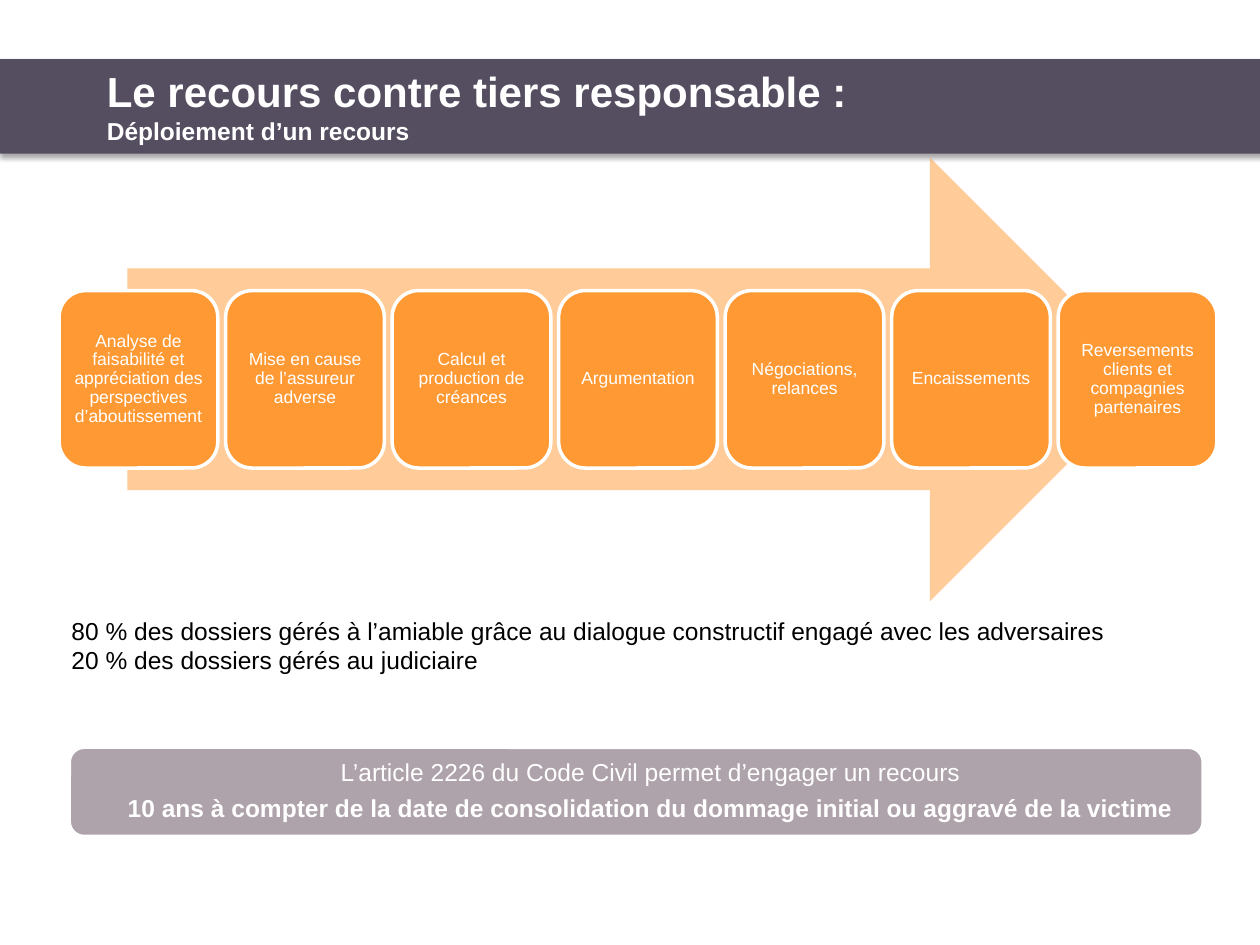
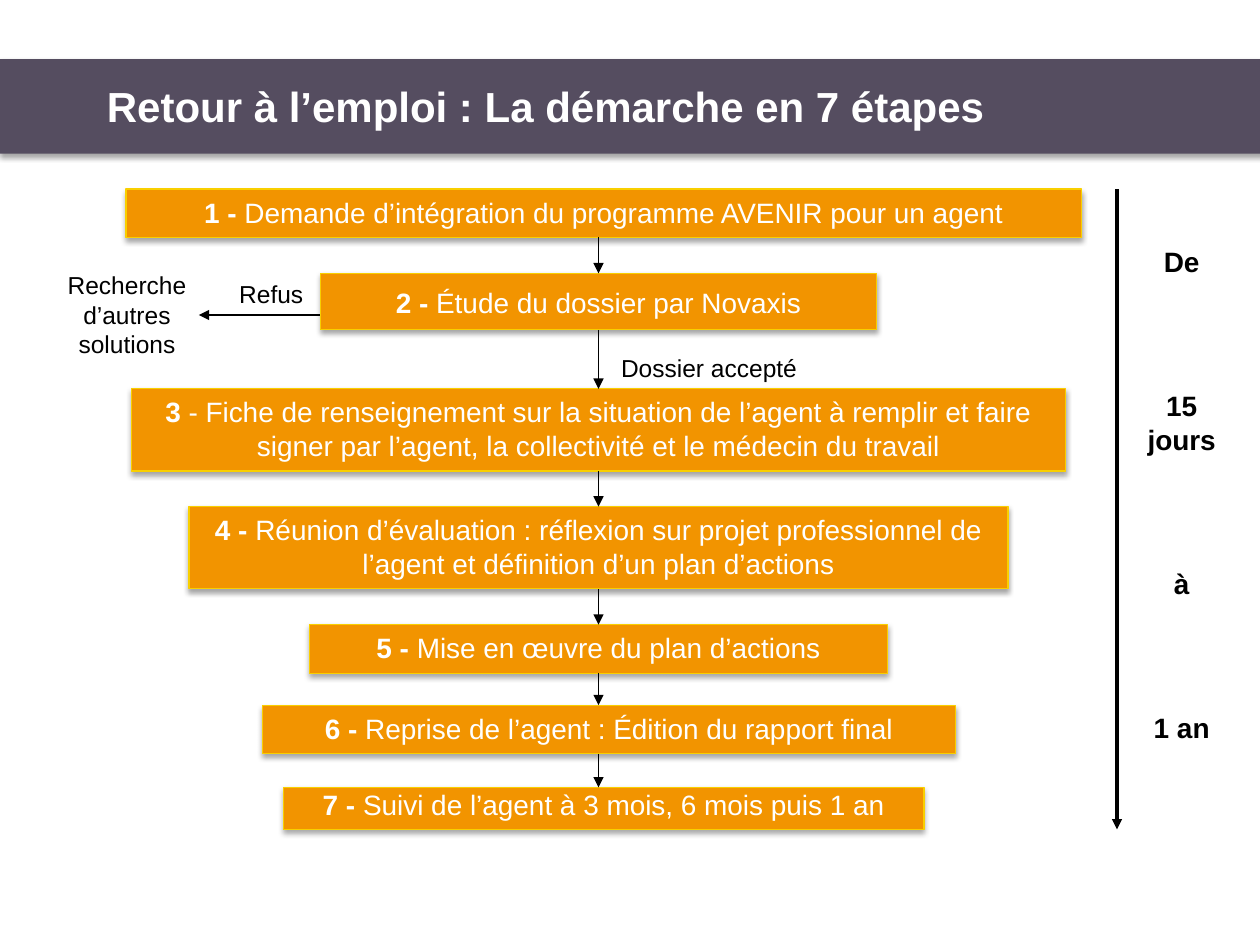
from itertools import pairwise

from lxml.etree import SubElement as Sub
from pptx import Presentation
from pptx.dml.color import RGBColor as Rgb
from pptx.enum.shapes import MSO_CONNECTOR as Line, MSO_SHAPE as Form
from pptx.enum.text import MSO_ANCHOR as Anchor, PP_ALIGN as Align
from pptx.oxml.ns import qn
from pptx.util import Pt

HUES = {
    "band": "554D60",
    "white": "FFFFFF",
    "black": "000000",
    "peach": "FF9933",
    "mauve": "AFA3AB",
    "amber": "F29400",
    "gold": "F9CF00",
}
FACE = "Arial"


def tint(name):
    return Rgb.from_string(HUES[name])


def shape(slide, form, box, fill, edge=None, width=1):
    item = slide.shapes.add_shape(form, *map(Pt, box))
    item.shadow.inherit = False
    item.fill.solid()
    item.fill.fore_color.rgb = tint(fill)
    if edge:
        item.line.color.rgb = tint(edge)
        item.line.width = Pt(width)
    else:
        item.line.fill.background()
    return item


def shade(item):
    glow = item._element.spPr.find(qn("a:effectLst"))
    cast = Sub(glow, qn("a:outerShdw"), blurRad=str(Pt(3.1)), dist=str(Pt(1.8)),
               dir="5400000", rotWithShape="0")
    hue = Sub(cast, qn("a:srgbClr"), val=HUES["black"])
    Sub(hue, qn("a:alpha"), val="35000")


def write(item, lines, size, hue="black", bold=False, align=Align.LEFT,
          anchor=Anchor.TOP, pads=(7.2, 3.6, 7.2, 3.6), gap=0, pitch=None):
    frame = item.text_frame
    frame.word_wrap = True
    frame.vertical_anchor = anchor
    (frame.margin_left, frame.margin_top,
     frame.margin_right, frame.margin_bottom) = map(Pt, pads)
    for i, line in enumerate(lines):
        para = frame.paragraphs[0] if i == 0 else frame.add_paragraph()
        para.alignment = align
        if i:
            para.space_before = Pt(gap)
        if pitch:
            para.line_spacing = pitch
        font = para.font
        font.name, font.size, font.color.rgb = FACE, Pt(size), tint(hue)
        if isinstance(line, tuple):
            for text, heavy in zip(line, (True, False)):
                run = para.add_run()
                run.text, run.font.bold = text, heavy
        else:
            font.bold = bold
            para.add_run().text = line
    return frame


def label(slide, box, lines, size=14, **style):
    return write(slide.shapes.add_textbox(*map(Pt, box)), lines, size, **style)


def arrow(slide, start, end, width=1):
    item = slide.shapes.add_connector(Line.STRAIGHT, *map(Pt, start + end))
    item.line.color.rgb = tint("black")
    item.line.width = Pt(width)
    Sub(item.line._get_or_add_ln(), qn("a:tailEnd"), type="triangle")
    Sub(item._element.spPr, qn("a:effectLst"))
    return item


def header(slide, box, title, note=None):
    x, y, w, h = box
    shade(shape(slide, Form.RECTANGLE, box, "band"))
    lines = [title, note] if note else [title]
    frame = label(slide, (x + 54.5, y - 2, w - 75, h + 3), lines, 24,
                  hue="white", bold=True, anchor=Anchor.MIDDLE)
    if note:
        frame.paragraphs[1].font.size = Pt(14)


def process(slide, box, names):
    x, y, w, h = box
    back = shape(slide, Form.RIGHT_ARROW, (x + 39, y, w - 76.2, h), "peach")
    hue = back._element.spPr.find(qn("a:solidFill"))[0]
    Sub(hue, qn("a:alpha"), val="50000")
    wide, high = 90.7, h * 0.4
    step = (w - wide) / (len(names) - 1)
    for i, name in enumerate(names):
        card = shape(slide, Form.ROUNDED_RECTANGLE,
                     (x + i * step, y + (h - high) / 2, wide, high),
                     "peach", "white", 2)
        write(card, [name], 10, hue="white", align=Align.CENTER,
              anchor=Anchor.MIDDLE, pads=(2.9,) * 4, pitch=0.9)


def banner(slide, box, lines):
    item = shape(slide, Form.ROUNDED_RECTANGLE, box, "mauve", "white", 2)
    frame = write(item, lines, 14, hue="white", align=Align.CENTER,
                  anchor=Anchor.MIDDLE, pads=(18.4, 4, 1.9, 4), gap=5.6, pitch=0.9)
    frame.paragraphs[1].font.bold = True


def flow(slide, box, steps):
    x, y, w, h = box
    axis = x + 270
    cards = []
    for left, top, wide, high, pad, *text in steps:
        card = shape(slide, Form.RECTANGLE, (x + left, y + top, wide, high),
                     "amber", "gold", 0.75)
        shade(card)
        write(card, [tuple(text)], 16, hue="white", align=Align.CENTER,
              pads=(7.2, pad, 7.2, 3.6))
        cards.append(card)
    for above, below in pairwise(cards):
        link = arrow(slide, (axis, above.top.pt + above.height.pt),
                     (axis, below.top.pt))
        for card, side, join in ((above, 2, link.begin_connect),
                                 (below, 0, link.end_connect)):
            if abs(card.left.pt + card.width.pt / 2 - axis) < 1:
                join(card, side)
    label(slide, (x + 275.8, y + 90, 138, 24), ["Dossier accepté"])


def refusal(slide, box):
    x, y, w, h = box
    arrow(slide, (x + w, y + h / 2), (x + 92, y + h / 2))
    label(slide, (x, y, 102, h), ["Recherche", "d’autres solutions"], align=Align.CENTER)
    label(slide, (x + 108, y + 5, 66, 24), ["Refus"])


def timeline(slide, box, marks):
    x, y, w, h = box
    arrow(slide, (x, y), (x, y + h), 1.75)
    label(slide, (x + 0.9, y + 28, w - 0.9, 305), marks, 16, bold=True,
          align=Align.CENTER, gap=63.3)


def main():
    deck = Presentation()
    deck.slide_width, deck.slide_height = Pt(720), Pt(540)
    blank = deck.slide_layouts[6]
    band = (-0.5, 33.8, 723, 54)

    slide = deck.slides.add_slide(blank)
    header(slide, band, "Le recours contre tiers responsable :", "Déploiement d’un recours")
    process(slide, (33.8, 90, 661.6, 253.5), [
        "Analyse de faisabilité et appréciation des perspectives d’aboutissement",
        "Mise en cause de l’assureur adverse",
        "Calcul et production de créances",
        "Argumentation",
        "Négociations, relances",
        "Encaissements",
        "Reversements clients et compagnies partenaires",
    ])
    label(slide, (33.8, 348.5, 664, 41), [
        "80 % des dossiers gérés à l’amiable grâce au dialogue constructif "
        "engagé avec les adversaires",
        "20 % des dossiers gérés au judiciaire",
    ])
    banner(slide, (39.6, 427, 648, 51), [
        "L’article 2226 du Code Civil permet d’engager un recours",
        "10 ans à compter de la date de consolidation du dommage initial "
        "ou aggravé de la victime",
    ])

    slide = deck.slides.add_slide(blank)
    header(slide, band, "Retour à l’emploi : La démarche en 7 étapes")
    refusal(slide, (21.6, 151, 164, 58))
    flow(slide, (72, 108, 546, 366), [
        (0, 0, 546, 27.7, 3.6, "1 -",
         " Demande d’intégration du programme AVENIR pour un agent"),
        (111, 48.2, 318, 32.3, 7.2, "2 -", " Étude du dossier par Novaxis"),
        (3, 114.2, 534, 47, 3.6, "3",
         " - Fiche de renseignement sur la situation de l’agent à remplir et "
         "faire signer par l’agent, la collectivité et le médecin du travail"),
        (36, 181.5, 468, 47, 3.6, "4 -",
         " Réunion d’évaluation : réflexion sur projet professionnel de "
         "l’agent et définition d’un plan d’actions"),
        (105, 249, 330, 27.7, 3.6, "5 -", " Mise en œuvre du plan d’actions"),
        (78, 295, 396, 27.7, 3.6, "6 -",
         " Reprise de l’agent : Édition du rapport final"),
        (90, 342, 366, 24, 0, "7 -", " Suivi de l’agent à 3 mois, 6 mois puis 1 an"),
    ])
    timeline(slide, (638.3, 108, 73, 366), ["De", "15 jours", "à", "1 an"])

    deck.save("out.pptx")


if __name__ == "__main__":
    main()
